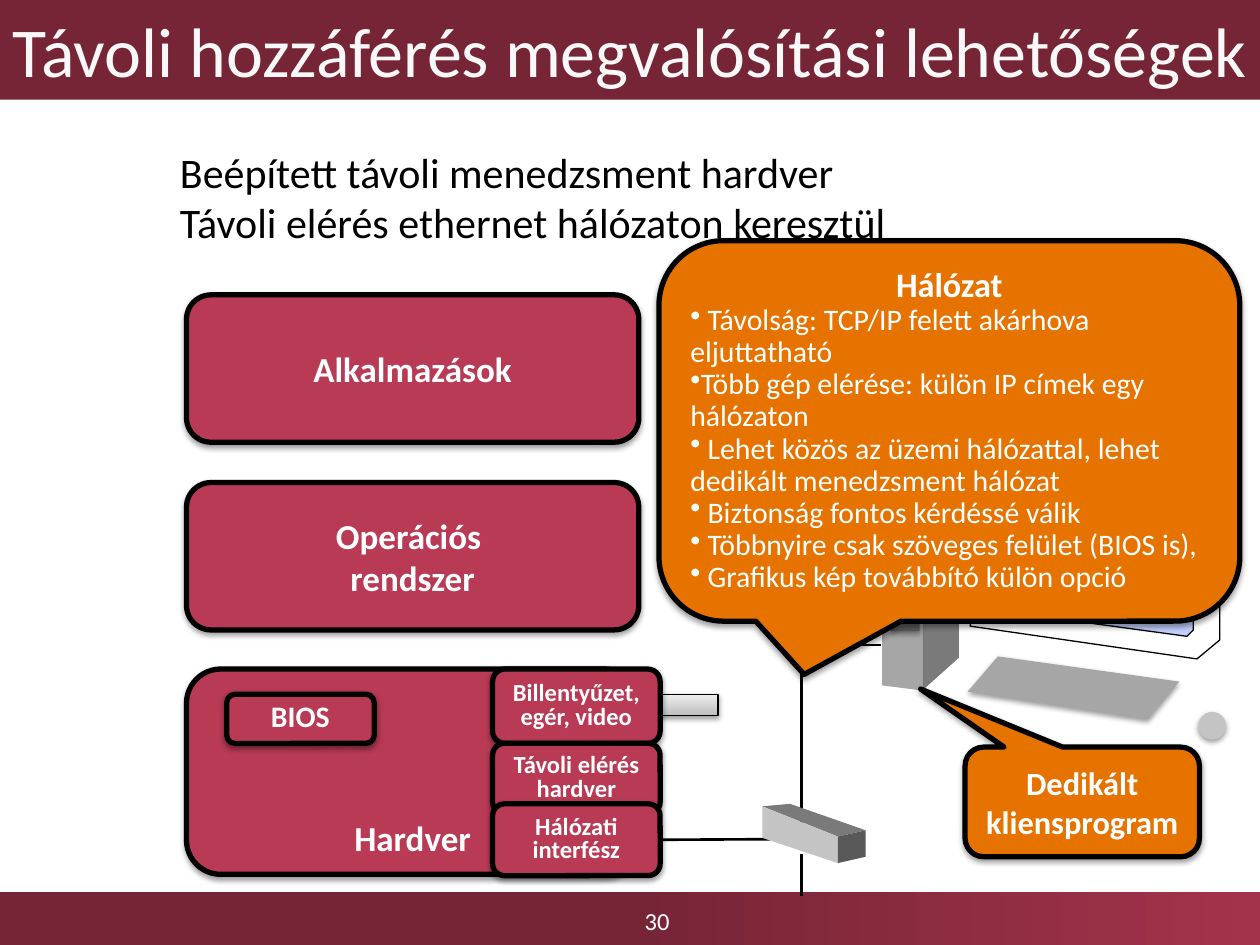
from dataclasses import dataclass

from lxml import etree
from pptx import Presentation
from pptx import util as u
from pptx.dml.color import RGBColor
from pptx.enum import shapes, text
from pptx.oxml.ns import qn

KIND = shapes.MSO_SHAPE
ALIGN = text.PP_ALIGN
ANCHOR = text.MSO_ANCHOR


@dataclass(frozen=True)
class Theme:
    font: str = "Calibri"
    wine: str = "762536"
    wine_light: str = "A3334B"
    layer: str = "B83A55"
    callout: str = "E67300"
    black: str = "000000"
    white: str = "FFFFFF"
    title_text: str = "F8F8F8"
    top_face: str = "C4C4C4"
    front_face: str = "A6A6A6"
    side_face: str = "7A7A7A"
    slot: str = "595959"
    screen: str = "C3D1FF"
    port_dark: str = "BDBDBD"
    port_light: str = "EEEEEE"
    title_size: float = 40
    lead_size: float = 24
    layer_size: float = 20
    heading_size: float = 19.6
    client_size: float = 18.5
    body_size: float = 17
    small_size: float = 14
    outline: float = 3
    wire: float = 1.5
    hairline: float = 0.75


def write(para, content, *, theme, size, color, bold=False, align=None, spacing=None, bullet=None):
    para.text = content
    para.alignment = align
    if spacing:
        para.line_spacing = spacing
    if bullet:
        etree.SubElement(para._p.get_or_add_pPr(), qn("a:buChar"), char=bullet)
    for span in para.runs:
        span.font.name = theme.font
        span.font.size = u.Pt(size)
        span.font.bold = bold
        span.font.color.rgb = RGBColor.from_string(color)


class Painter:
    def __init__(self, page, theme):
        self.page = page
        self.theme = theme

    def text(self, box, lines, *, anchor=ANCHOR.MIDDLE, wrap=True, **style):
        frame = box.text_frame
        frame.word_wrap = wrap
        frame.vertical_anchor = anchor
        for index, line in enumerate(lines):
            para = frame.add_paragraph() if index else frame.paragraphs[0]
            content, extra = line if isinstance(line, tuple) else (line, {})
            write(para, content, theme=self.theme, **{**style, **extra})

    def paint(self, box, fill, outline=None, shadow=False):
        if isinstance(fill, str):
            box.fill.solid()
            box.fill.fore_color.rgb = RGBColor.from_string(fill)
        else:
            stops, angle = fill
            box.fill.gradient()
            box.fill.gradient_angle = angle
            for stop, (position, color) in zip(box.fill.gradient_stops, stops):
                stop.position = position
                stop.color.rgb = RGBColor.from_string(color)
        if outline:
            box.line.color.rgb = RGBColor.from_string(self.theme.black)
            box.line.width = u.Pt(outline)
        else:
            box.line.fill.background()
        box.shadow.inherit = False
        if shadow:
            effects = box._element.spPr.find(qn("a:effectLst"))
            outer = etree.SubElement(effects, qn("a:outerShdw"), blurRad="40000", dist="20000",
                                     dir="5400000", rotWithShape="0")
            color = etree.SubElement(outer, qn("a:srgbClr"), val=self.theme.black)
            etree.SubElement(color, qn("a:alpha"), val="38000")
        return box

    def shape(self, kind, place, fill, adjust=(), **look):
        box = self.page.shapes.add_shape(kind, *map(u.Inches, place))
        for index, value in enumerate(adjust):
            box.adjustments[index] = value
        return self.paint(box, fill, **look)

    def layer(self, place, label, size, **style):
        box = self.shape(KIND.ROUNDED_RECTANGLE, place, self.theme.layer,
                         outline=self.theme.outline, shadow=True)
        self.text(box, [label], size=size, color=self.theme.white, bold=True,
                  align=ALIGN.CENTER, **style)
        return box

    def callout(self, place, adjust, lines, **style):
        box = self.shape(KIND.ROUNDED_RECTANGULAR_CALLOUT, place, self.theme.callout, adjust,
                         outline=self.theme.outline, shadow=True)
        self.text(box, lines, color=self.theme.white, **style)

    def label(self, place, lines, **style):
        box = self.page.shapes.add_textbox(*map(u.Inches, place))
        self.text(box, lines, **style)

    def face(self, points, fill, **look):
        corners = [(u.Inches(x), u.Inches(y)) for x, y in points]
        builder = self.page.shapes.build_freeform(*corners[0])
        builder.add_line_segments(corners[1:], close=True)
        self.paint(builder.convert_to_shape(), fill, **look)

    def wire(self, start, end, bent=False):
        kind = shapes.MSO_CONNECTOR.ELBOW if bent else shapes.MSO_CONNECTOR.STRAIGHT
        line = self.page.shapes.add_connector(kind, *map(u.Inches, (*start, *end)))
        line.line.color.rgb = RGBColor.from_string(self.theme.black)
        line.line.width = u.Pt(self.theme.wire)
        properties = line._element.spPr
        if bent:
            properties.find(qn("a:prstGeom")).set("prst", "bentConnector2")
        etree.SubElement(properties, qn("a:effectLst"))
        return line


def draw_computer(painter):
    theme = painter.theme
    painter.face([(7, 4.7), (7.32, 4.72), (7.32, 5.48), (7, 5.44)], theme.front_face)
    painter.face([(7.32, 4.72), (7.61, 4.5), (7.61, 5.22), (7.32, 5.48)], theme.side_face)
    for top in (4.83, 4.94):
        painter.shape(KIND.RECTANGLE, (7.07, top, 0.23, 0.07), theme.slot, shadow=True)
    painter.face([(7.7, 4.3), (9.68, 4.5), (9.68, 5.08), (9.5, 5.23), (7.7, 4.97)],
                 theme.white, outline=theme.hairline)
    painter.face([(7.95, 4.3), (9.47, 4.5), (9.47, 5), (9.42, 5.05), (7.95, 4.85)],
                 theme.screen, outline=theme.hairline)
    painter.face([(7.92, 5.21), (9.36, 5.41), (9.11, 5.71), (7.68, 5.49)],
                 theme.front_face, shadow=True)
    mouse = painter.shape(KIND.OVAL, (9.51, 5.65, 0.22, 0.22), theme.top_face, shadow=True)
    mouse.rotation = 45


def draw_switch(painter):
    theme = painter.theme
    painter.face([(6.05, 6.4), (6.27, 6.38), (6.87, 6.59), (6.65, 6.64)], theme.side_face)
    painter.face([(6.05, 6.4), (6.65, 6.64), (6.65, 6.85), (6.05, 6.65)], theme.top_face)
    painter.face([(6.65, 6.64), (6.87, 6.59), (6.87, 6.8), (6.65, 6.85)], theme.slot)


def main():
    theme = Theme()
    deck = Presentation()
    deck.slide_width, deck.slide_height = u.Inches(10), u.Inches(7.5)
    painter = Painter(deck.slides.add_slide(deck.slide_layouts[6]), theme)

    painter.shape(KIND.RECTANGLE, (0, 7.08, 10, 0.42),
                  (((0.5, theme.wine), (1, theme.wine_light)), 0))
    painter.label((3.59, 7.11, 3.25, 0.39), ["30"], size=theme.small_size,
                  color=theme.white, align=ALIGN.CENTER)
    draw_computer(painter)
    painter.wire((6.99, 5.12), (6.36, 6.54), bent=True)
    painter.shape(KIND.RECTANGLE, (5.23, 5.51, 0.47, 0.17),
                  (((0, theme.port_dark), (1, theme.port_light)), 90),
                  outline=theme.hairline, shadow=True)
    title = painter.shape(KIND.RECTANGLE, (0, 0, 10, 0.79), theme.wine)
    painter.text(title, ["Távoli hozzáférés megvalósítási lehetőségek"], wrap=False,
                 size=theme.title_size, color=theme.title_text, align=ALIGN.CENTER)

    painter.layer((1.48, 5.31, 3.59, 1.63), "Hardver", theme.layer_size, anchor=ANCHOR.BOTTOM)
    painter.layer((1.8, 5.51, 1.17, 0.39), "BIOS", theme.body_size, spacing=0.8)
    for top, name in ((3.83, "Operációs \vrendszer"), (2.34, "Alkalmazások")):
        painter.layer((1.48, top, 3.59, 1.17), name, theme.layer_size)
    for top, height, name in ((5.31, 0.59, "Billentyűzet,\vegér, video"),
                              (5.9, 0.56, "Távoli elérés hardver"),
                              (6.38, 0.57, "Hálózati interfész")):
        network_port = painter.layer((3.91, top, 1.33, height), name,
                                     theme.small_size, spacing=0.8)
    painter.wire((5.24, 6.66), (6.17, 6.66)).begin_connect(network_port, 3)
    painter.wire((6.36, 6.78), (6.36, 7.11))
    draw_switch(painter)

    painter.label((1.33, 1.11, 7.42, 1),
                  ["Beépített távoli menedzsment hardver",
                   "Távoli elérés ethernet hálózaton keresztül"],
                  anchor=ANCHOR.TOP, wrap=False, size=theme.lead_size, color=theme.black)
    heading = {"size": theme.heading_size, "bold": True, "align": ALIGN.CENTER, "bullet": None}
    painter.callout((5.23, 1.91, 4.61, 3.02), (-0.25, 0.64, 0.17),
                    [("Hálózat", heading),
                     " Távolság: TCP/IP felett akárhova eljuttatható",
                     "Több gép elérése: külön IP címek egy hálózaton",
                     " Lehet közös az üzemi hálózattal, lehet dedikált menedzsment hálózat",
                     " Biztonság fontos kérdéssé válik",
                     " Többnyire csak szöveges felület (BIOS is),",
                     " Grafikus kép továbbító külön opció"],
                    size=theme.body_size, align=ALIGN.LEFT, spacing=0.9, bullet="•")
    painter.callout((7.66, 5.93, 1.86, 0.87), (-0.69, -1.03, 0.17), ["Dedikált kliensprogram"],
                    size=theme.client_size, bold=True, align=ALIGN.CENTER)
    deck.save("out.pptx")


if __name__ == "__main__":
    main()
